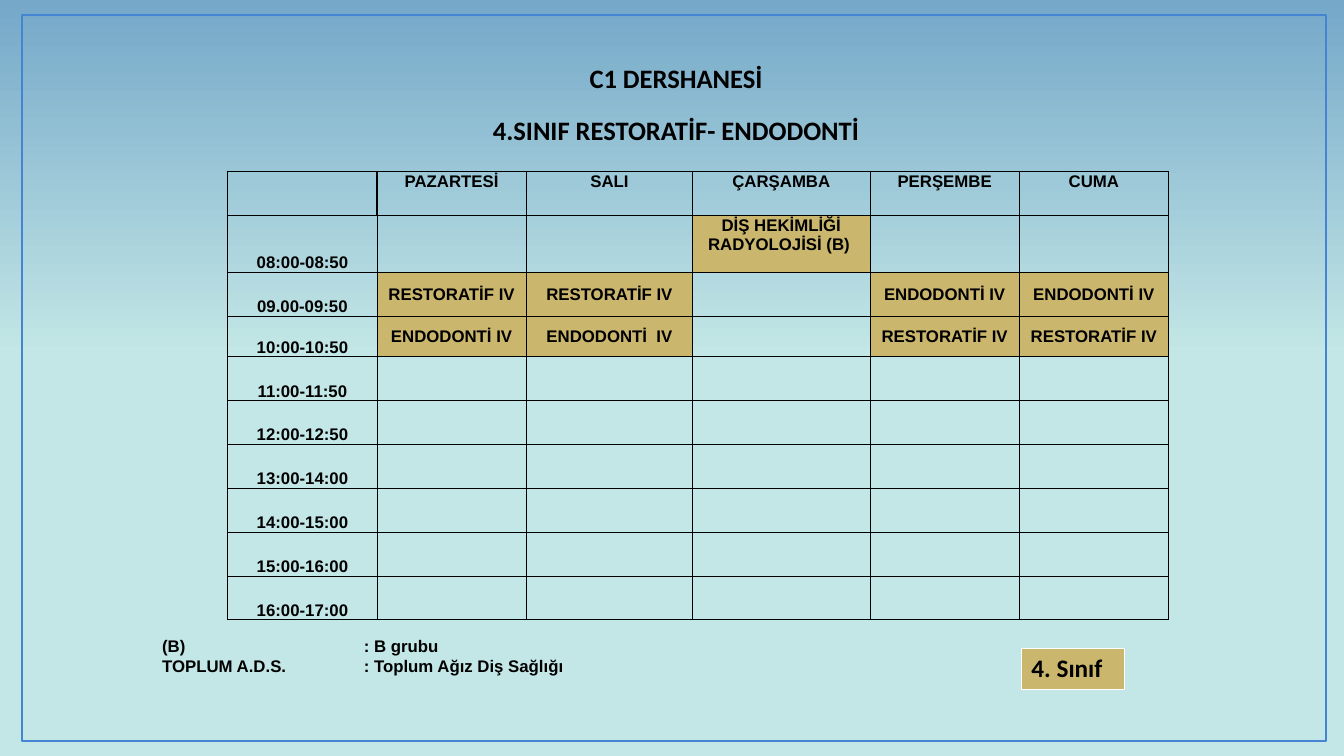
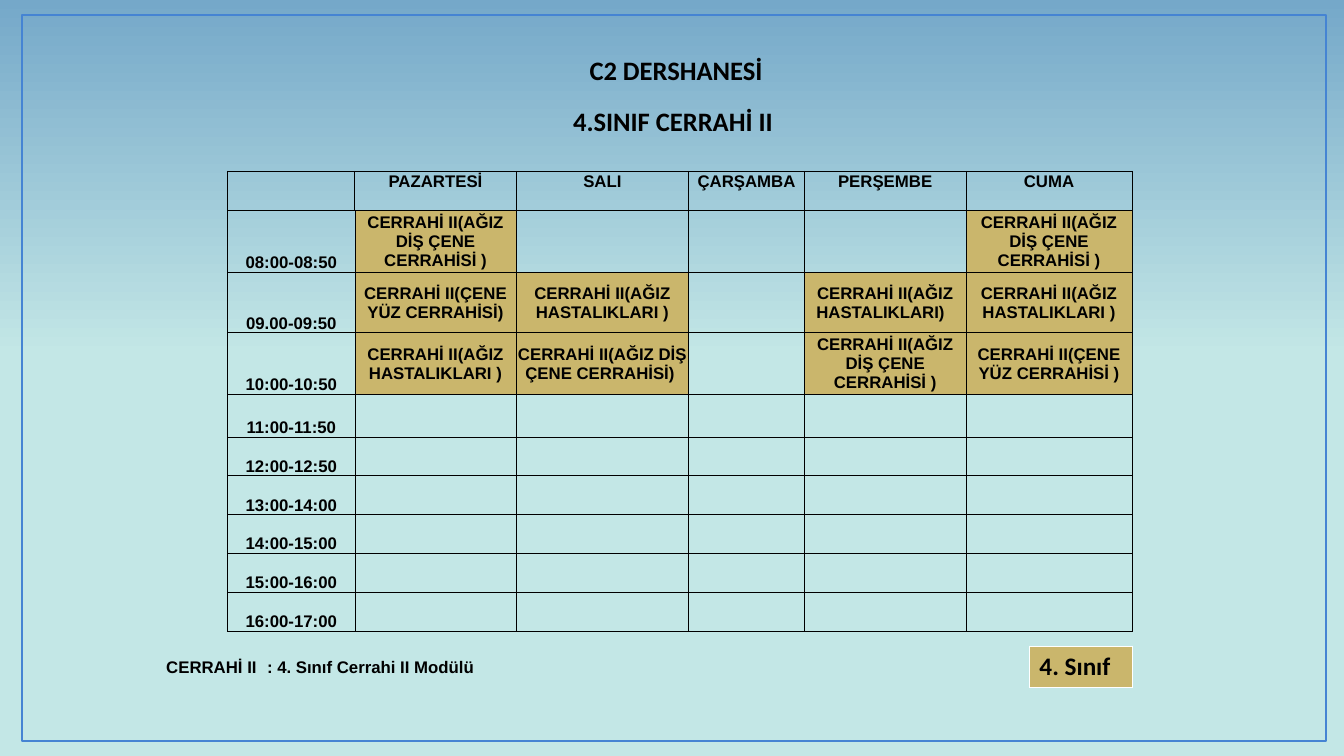
import lxml.etree
import pptx
import pptx.dml.color
import pptx.enum.shapes
import pptx.enum.text
import pptx.oxml.ns
import pptx.util

Inches = pptx.util.Inches
Pt = pptx.util.Pt
qn = pptx.oxml.ns.qn
ALIGN = pptx.enum.text.PP_ALIGN
ANCHOR = pptx.enum.text.MSO_ANCHOR

COLORS = {
    "sky": "75A8C9",
    "mint": "C3E7E6",
    "frame": "4584D3",
    "lesson": "CAB66C",
    "ink": "000000",
    "white": "FFFFFF",
}
TITLE_FONT = {"name": "Calibri", "size": Pt(19), "bold": True}
BADGE_FONT = {"name": "Calibri", "size": Pt(18), "bold": True}
TEXT_FONT = {"name": "Arial", "size": Pt(12), "bold": True}
TIGHT_CELL = {
    "margin_left": Inches(0.01),
    "margin_right": Inches(0.01),
    "margin_top": Inches(0.01),
    "margin_bottom": 0,
}

DAYS = ["PAZARTESİ", "SALI", "ÇARŞAMBA", "PERŞEMBE", "CUMA"]
HOURS = [
    "08:00-08:50", "09.00-09:50", "10:00-10:50", "11:00-11:50", "12:00-12:50",
    "13:00-14:00", "14:00-15:00", "15:00-16:00", "16:00-17:00",
]
RESTORATIVE = "RESTORATİF IV"
ENDODONTICS = "ENDODONTİ IV"
ORAL_SURGERY = "CERRAHİ II(AĞIZ DİŞ ÇENE CERRAHİSİ )"
ORAL_DISEASE = "CERRAHİ II(AĞIZ HASTALIKLARI )"
FACE_SURGERY = "CERRAHİ II(ÇENE YÜZ CERRAHİSİ )"

TIMETABLES = [
    {
        "titles": ["C1 DERSHANESİ", "4.SINIF RESTORATİF- ENDODONTİ"],
        "title_at": (0.23, 0.44),
        "title_width": 12.95,
        "columns": [1.48, 1.48, 1.65, 1.76, 1.48, 1.48],
        "rows": [0.44, 0.56, 0.44, 0.4] + [2.61 / 6] * 6,
        "lessons": [
            ["", "", "DİŞ HEKİMLİĞİ RADYOLOJİSİ (B) ", "", ""],
            [RESTORATIVE, RESTORATIVE, "", ENDODONTICS, ENDODONTICS],
            [ENDODONTICS, "ENDODONTİ  IV", "", RESTORATIVE, RESTORATIVE],
        ],
        "top_lessons": {(1, 3)},
        "badge_at": (10.13, 6.43),
        "legend": "(B)\t: B grubu\nTOPLUM A.D.S.\t: Toplum Ağız Diş Sağlığı",
        "legend_at": (1.51, 6.26, 4.28, 0.5),
        "legend_tab": 2,
    },
    {
        "titles": ["C2 DERSHANESİ", "4.SINIF CERRAHİ II "],
        "title_at": (0.25, 0.36),
        "title_width": 12.91,
        "columns": [1.26, 1.6, 1.71, 1.15, 1.6, 1.65],
        "rows": [0.39, 0.56, 0.6, 0.56, 0.43, 0.38] + [1.54 / 4] * 4,
        "lessons": [
            [ORAL_SURGERY, "", "", "", ORAL_SURGERY],
            ["CERRAHİ II(ÇENE YÜZ CERRAHİSİ)", ORAL_DISEASE, "",
             "CERRAHİ II(AĞIZ HASTALIKLARI)  ", ORAL_DISEASE],
            [ORAL_DISEASE, "CERRAHİ II(AĞIZ DİŞ ÇENE CERRAHİSİ) ", "",
             ORAL_SURGERY, FACE_SURGERY],
        ],
        "top_lessons": set(),
        "badge_at": (10.21, 6.41),
        "legend": "CERRAHİ II\t: 4. Sınıf Cerrahi II Modülü",
        "legend_at": (1.55, 6.47, 3.29, 0.3),
        "legend_tab": 1,
    },
]


def color(name):
    return pptx.dml.color.RGBColor.from_string(COLORS[name])


def apply(target, formats):
    for name, value in formats.items():
        setattr(target, name, value)


def write(frame, text, font, **para_formats):
    frame.text = text
    for para in frame.paragraphs:
        apply(para, para_formats)
        for span in para.runs:
            apply(span.font, font)
            span.font.color.rgb = color("ink")


def set_borders(cell, widths, color_name=None):
    properties = cell._tc.get_or_add_tcPr()
    for side in "LRTB":
        line = lxml.etree.SubElement(
            properties, qn(f"a:ln{side}"), w=str(Pt(widths[side])))
        if color_name:
            fill = lxml.etree.SubElement(line, qn("a:solidFill"))
            lxml.etree.SubElement(
                fill, qn("a:srgbClr"), val=COLORS[color_name])
        else:
            lxml.etree.SubElement(line, qn("a:noFill"))


def add_grid(page, left, top, columns, rows):
    box = page.shapes.add_table(
        len(rows), len(columns), Inches(left), Inches(top),
        Inches(sum(columns)), Inches(sum(rows)))
    table = box.table
    apply(table, {"first_row": False, "horz_banding": False})
    for column, width in zip(table.columns, columns):
        column.width = Inches(width)
    for row, height in zip(table.rows, rows):
        row.height = Inches(height)
    return table


def fill_cell(cell, filled):
    if filled:
        cell.fill.solid()
        cell.fill.fore_color.rgb = color("lesson")
    else:
        cell.fill.background()


def add_titles(page, titles, position, width):
    table = add_grid(page, *position, [width], [0.51] * len(titles))
    for row, text in enumerate(titles):
        cell = table.cell(row, 0)
        write(cell.text_frame, text, TITLE_FONT, alignment=ALIGN.CENTER)
        apply(cell, TIGHT_CELL)
        cell.vertical_anchor = ANCHOR.BOTTOM
        set_borders(cell, dict.fromkeys("LRTB", 0))
        fill_cell(cell, False)


def schedule_borders(row, column):
    heavy = {
        "L": column == 0 or (row == 0 and column == 1),
        "R": column == len(DAYS) or (row == 0 and column == 0),
        "T": row < 2,
        "B": row == 0,
    }
    return {side: 1 if thick else 0.5 for side, thick in heavy.items()}


def add_schedule(page, plan):
    table = add_grid(page, 2.26, 1.7, plan["columns"], plan["rows"])
    free_hours = len(HOURS) - len(plan["lessons"])
    lessons = plan["lessons"] + [[""] * len(DAYS)] * free_hours
    texts = [[""] + DAYS]
    texts += [[hour] + names for hour, names in zip(HOURS, lessons)]
    for row, line in enumerate(texts):
        for column, text in enumerate(line):
            cell = table.cell(row, column)
            write(cell.text_frame, text, TEXT_FONT, alignment=ALIGN.CENTER)
            apply(cell, TIGHT_CELL)
            if row == 0 or (row, column) in plan["top_lessons"]:
                cell.vertical_anchor = ANCHOR.TOP
            elif column == 0:
                cell.vertical_anchor = ANCHOR.BOTTOM
            else:
                cell.vertical_anchor = ANCHOR.MIDDLE
            set_borders(cell, schedule_borders(row, column), "ink")
            fill_cell(cell, row > 0 and column > 0 and text)


def add_badge(page, left, top):
    cell = add_grid(page, left, top, [1.02], [0.41]).cell(0, 0)
    write(cell.text_frame, "4. Sınıf", BADGE_FONT)
    set_borders(cell, dict.fromkeys("LRTB", 1), "white")
    fill_cell(cell, True)


def add_legend(page, text, position, tab):
    box = page.shapes.add_textbox(*map(Inches, position))
    box.text_frame.word_wrap = True
    write(box.text_frame, text, TEXT_FONT)
    for para in box.text_frame.paragraphs:
        stops = lxml.etree.SubElement(
            para._p.get_or_add_pPr(), qn("a:tabLst"))
        lxml.etree.SubElement(
            stops, qn("a:tab"), pos=str(Inches(tab)), algn="l")


def style_master(deck, page):
    master = deck.slide_master
    fill = master.background.fill
    fill.gradient()
    fill.gradient_angle = 90
    stops = [(0.53, "mint"), (1, "sky")]
    for stop, (position, name) in zip(fill.gradient_stops, stops):
        stop.position = position
        stop.color.rgb = color(name)
    frame = page.shapes.add_shape(
        pptx.enum.shapes.MSO_SHAPE.RECTANGLE,
        Inches(0.22), Inches(0.15), Inches(12.93), Inches(7.2))
    frame.shadow.inherit = False
    frame.fill.background()
    frame.line.color.rgb = color("frame")
    frame.line.width = Pt(1.5)
    frame.element.nvSpPr.cNvPr.set("id", "20")
    master.element.cSld.spTree.insert(2, frame.element)


def add_timetable(deck, plan):
    page = deck.slides.add_slide(deck.slide_layouts[6])
    add_titles(page, plan["titles"], plan["title_at"], plan["title_width"])
    add_schedule(page, plan)
    add_badge(page, *plan["badge_at"])
    add_legend(page, plan["legend"], plan["legend_at"], plan["legend_tab"])


def main():
    deck = pptx.Presentation()
    apply(deck, {"slide_width": Inches(13.33), "slide_height": Inches(7.5)})
    for plan in TIMETABLES:
        add_timetable(deck, plan)
    style_master(deck, deck.slides[0])
    deck.save("out.pptx")


if __name__ == "__main__":
    main()
